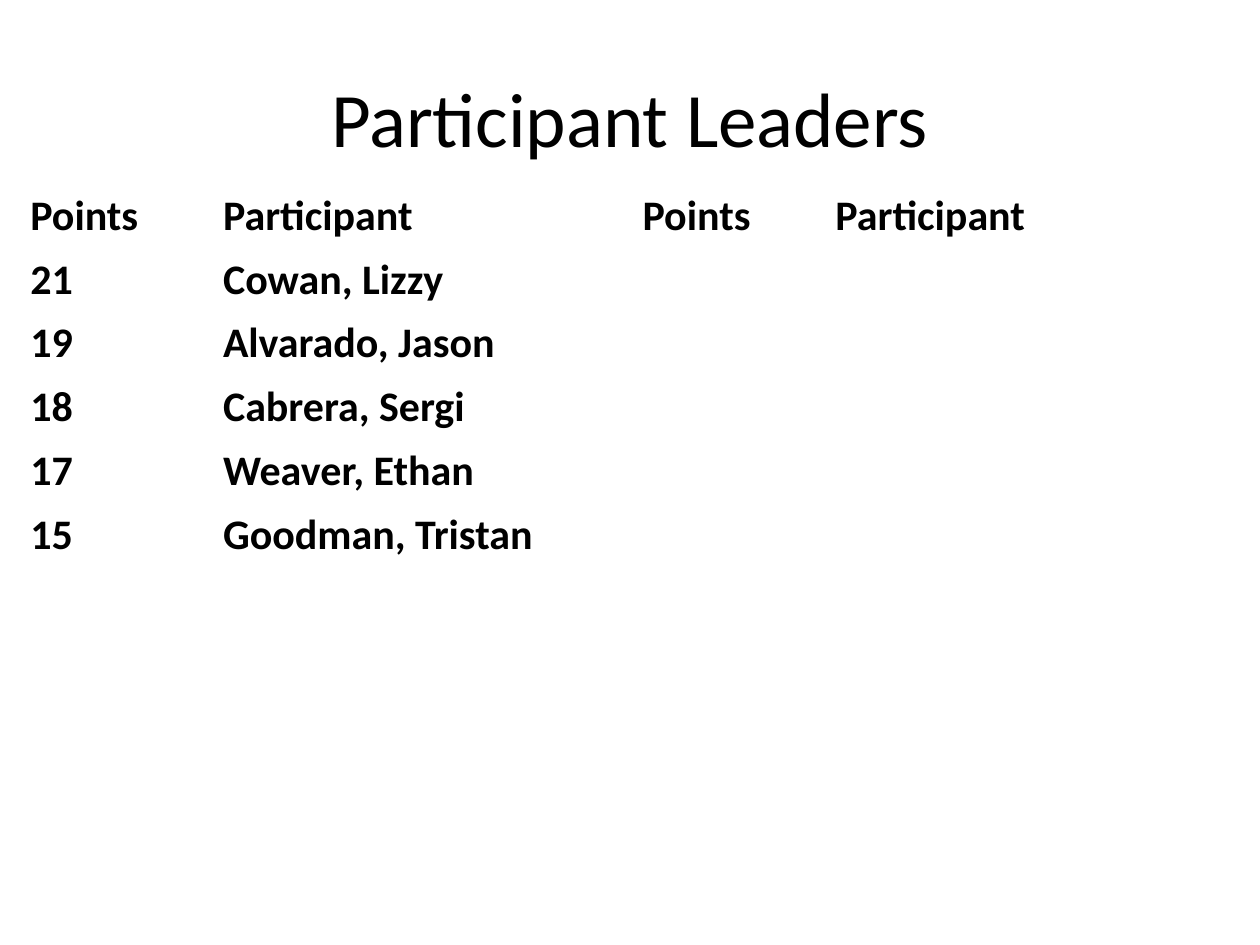
import dataclasses
import typing

import lxml.etree
import pptx
import pptx.dml.color
import pptx.enum.text
import pptx.oxml.ns
import pptx.util


@dataclasses.dataclass(frozen=True)
class Theme:
    font: str = "Calibri"
    ink: str = "000000"
    paper: str = "FFFFFF"
    title_size: int = 44
    entry_size: int = 24
    rule: int = 1
    closing_rule: int = 3


class Area(typing.NamedTuple):
    left: float
    top: float
    width: float
    height: float


class Leader(typing.NamedTuple):
    points: int
    participant: str


THEME = Theme()
SLIDE_WIDTH = pptx.util.Inches(10)
SLIDE_HEIGHT = pptx.util.Inches(7.5)
TITLE_AREA = Area(0.05, 0.04, 0.9, 1 / 6)
BOARD_LEFT, BOARD_TOP = 0.014, 1.46 / 7.5
COLUMN_SHARES = (0.153, 0.333) * 2
ROW_COUNT = 11
ROW_SHARE = 1 / 15
HEADINGS = ("Points", "Participant") * 2
LEADERS = (
    Leader(21, "Cowan, Lizzy"),
    Leader(19, "Alvarado, Jason"),
    Leader(18, "Cabrera, Sergi"),
    Leader(17, "Weaver, Ethan"),
    Leader(15, "Goodman, Tristan"),
)


def across(share: float) -> int:
    return round(SLIDE_WIDTH * share)


def down(share: float) -> int:
    return round(SLIDE_HEIGHT * share)


def color(value: str) -> pptx.dml.color.RGBColor:
    return pptx.dml.color.RGBColor.from_string(value)


def add_words(paragraph, words: str, size: int, bold: bool) -> None:
    run = paragraph.add_run()
    run.text = words
    run.font.name = THEME.font
    run.font.size = pptx.util.Pt(size)
    run.font.bold = bold
    run.font.color.rgb = color(THEME.ink)


def add_title(slide, words: str) -> None:
    title = slide.shapes.title
    title.left, title.width = across(TITLE_AREA.left), across(TITLE_AREA.width)
    title.top, title.height = down(TITLE_AREA.top), down(TITLE_AREA.height)
    frame = title.text_frame
    frame.word_wrap = True
    frame.vertical_anchor = pptx.enum.text.MSO_ANCHOR.MIDDLE
    heading = frame.paragraphs[0]
    heading.alignment = pptx.enum.text.PP_ALIGN.CENTER
    add_words(heading, words, THEME.title_size, False)


def style_cell(cell, bottom_rule: int) -> None:
    cell.fill.solid()
    cell.fill.fore_color.rgb = color(THEME.paper)
    qn = pptx.oxml.ns.qn
    properties = cell._tc.get_or_add_tcPr()
    rules = {"L": THEME.rule, "R": THEME.rule, "T": THEME.rule, "B": bottom_rule}
    for position, (side, weight) in enumerate(rules.items()):
        border = lxml.etree.Element(qn(f"a:ln{side}"), w=str(pptx.util.Pt(weight)))
        fill = lxml.etree.SubElement(border, qn("a:solidFill"))
        lxml.etree.SubElement(fill, qn("a:srgbClr"), val=THEME.paper)
        properties.insert(position, border)


def add_leaderboard(slide, leaders: typing.Sequence[Leader]) -> None:
    board = slide.shapes.add_table(
        ROW_COUNT, len(COLUMN_SHARES), across(BOARD_LEFT), down(BOARD_TOP),
        across(sum(COLUMN_SHARES)), down(ROW_COUNT * ROW_SHARE),
    ).table
    board.horz_banding = False
    for column, share in zip(board.columns, COLUMN_SHARES):
        column.width = across(share)
    for index, row in enumerate(board.rows):
        row.height = down(ROW_SHARE)
        last = index == ROW_COUNT - 1
        for cell in row.cells:
            style_cell(cell, THEME.closing_rule if last else THEME.rule)
    for row, entries in zip(board.rows, (HEADINGS, *leaders)):
        for cell, entry in zip(row.cells, entries):
            add_words(cell.text_frame.paragraphs[0], str(entry), THEME.entry_size, True)


def main() -> None:
    deck = pptx.Presentation()
    deck.slide_width, deck.slide_height = SLIDE_WIDTH, SLIDE_HEIGHT
    slide = deck.slides.add_slide(deck.slide_layouts.get_by_name("Title Only"))
    slide.background.fill.solid()
    slide.background.fill.fore_color.rgb = color(THEME.paper)
    add_title(slide, "Participant Leaders")
    add_leaderboard(slide, LEADERS)
    deck.save("out.pptx")


if __name__ == "__main__":
    main()
